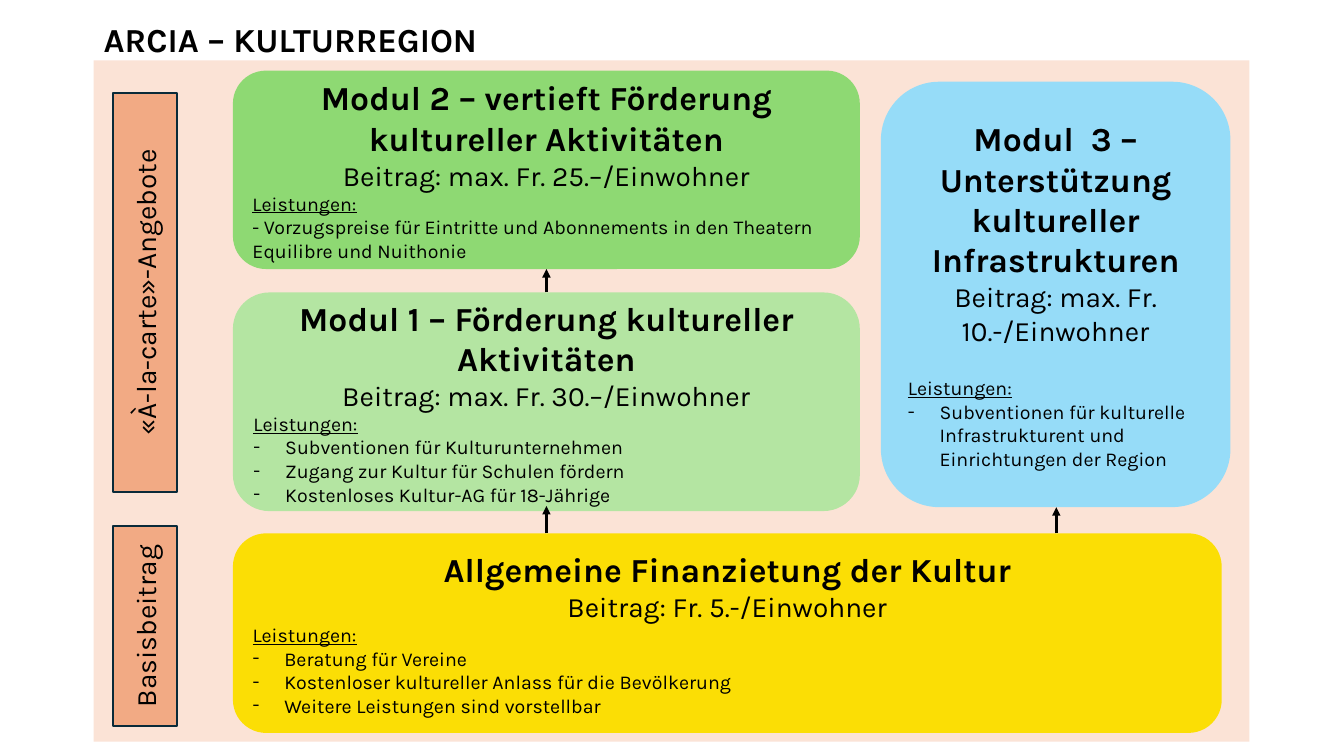
from lxml.etree import SubElement
from pptx import Presentation
from pptx.dml.color import RGBColor
from pptx.enum.shapes import MSO_CONNECTOR, MSO_SHAPE
from pptx.enum.text import MSO_ANCHOR, MSO_AUTO_SIZE, PP_ALIGN
from pptx.oxml.ns import qn
from pptx.util import Cm, Pt

FONT = "Karla"
COLORS = {
    "text": "000000",
    "panel": "FBE3D6",
    "label": "F2AA84",
    "label_line": "092A39",
    "base": "FBDE05",
    "module_1": "B4E5A2",
    "module_2": "8ED973",
    "module_3": "96DCF8",
}

# Boxes are left, top, width, height in centimetres
TITLE_BOX = (2.36, 0.36, 15.06, 1.27)
PANEL_BOX = (2.36, 1.52, 29.13, 17.17)
LABELS = [
    ("«À-la-carte»-Angebote", (2.84, 2.34, 1.63, 10.06)),
    ("Basisbeitrag", (2.84, 13.26, 1.63, 5.03)),
]
BASE_BOX = (5.87, 13.44, 24.92, 5.03)
MODULE_1_BOX = (5.87, 7.37, 15.8, 5.51)
MODULE_2_BOX = (5.87, 1.78, 15.8, 5)
MODULE_3_BOX = (22.2, 2.06, 8.81, 10.72)
ARROWS = [(13.77, 13.44, 12.75), (13.77, 7.37, 6.78), (26.62, 13.44, 12.78)]


def rgb(name):
    return RGBColor.from_string(COLORS[name])


def write_text(frame, text, size, bold=False, underline=False,
               align=PP_ALIGN.LEFT, dash=False, space_before=0):
    """Fill the empty first paragraph of the frame, or append a new one."""
    paragraph = frame.paragraphs[0]
    if paragraph.runs:
        paragraph = frame.add_paragraph()
    paragraph.alignment = align
    if space_before:
        paragraph.space_before = Pt(space_before)
    if dash:
        properties = paragraph._p.get_or_add_pPr()
        properties.set("marL", str(Cm(0.8)))
        properties.set("indent", str(Cm(-0.8)))
        SubElement(properties, qn("a:buFont"), typeface=FONT)
        SubElement(properties, qn("a:buChar"), char="-")
    run = paragraph.add_run()
    run.text = text
    font = run.font
    font.name, font.size = FONT, Pt(size)
    font.bold, font.underline = bold, underline
    font.color.rgb = rgb("text")


def add_box(slide, kind, box, fill, line=None):
    shape = slide.shapes.add_shape(kind, *map(Cm, box))
    shape.shadow.inherit = False
    shape.fill.solid()
    shape.fill.fore_color.rgb = rgb(fill)
    if line:
        shape.line.color.rgb = rgb(line)
        shape.line.width = Pt(1.5)
    else:
        shape.line.fill.background()
    shape.text_frame.word_wrap = True
    shape.text_frame.vertical_anchor = MSO_ANCHOR.MIDDLE
    return shape


def add_title(slide, text, box):
    title = slide.shapes.title
    title.left, title.top, title.width, title.height = map(Cm, box)
    frame = title.text_frame
    frame.word_wrap = True
    frame.auto_size = MSO_AUTO_SIZE.NONE
    frame.vertical_anchor = MSO_ANCHOR.TOP
    write_text(frame, text, 24, bold=True)


def add_side_label(slide, text, box):
    """Fill the upright box with a bar turned to read from bottom to top."""
    left, top, width, height = box
    shift = (height - width) / 2
    shape = add_box(slide, MSO_SHAPE.RECTANGLE,
                    (left - shift, top + shift, height, width), "label", "label_line")
    shape.rotation = 270
    write_text(shape.text_frame, text, 20, align=PP_ALIGN.CENTER)


def add_module(slide, box, fill, heading, fee, services, dash=True, gap=0):
    frame = add_box(slide, MSO_SHAPE.ROUNDED_RECTANGLE, box, fill).text_frame
    write_text(frame, heading, 24, bold=True, align=PP_ALIGN.CENTER)
    write_text(frame, fee, 20, align=PP_ALIGN.CENTER)
    write_text(frame, "Leistungen:", 14, underline=True, space_before=gap)
    for service in services:
        write_text(frame, service, 14, dash=dash)


def add_arrow(slide, x, start, end):
    arrow = slide.shapes.add_connector(
        MSO_CONNECTOR.STRAIGHT, Cm(x), Cm(start), Cm(x), Cm(end))
    arrow.line.color.rgb = rgb("text")
    arrow.line.width = Pt(2)
    SubElement(arrow.line._get_or_add_ln(), qn("a:tailEnd"), type="triangle")
    SubElement(arrow._element.spPr, qn("a:effectLst"))


def build_slide(presentation):
    slide = presentation.slides.add_slide(presentation.slide_layouts[5])
    add_title(slide, "ARCIA – KULTURREGION", TITLE_BOX)
    add_box(slide, MSO_SHAPE.RECTANGLE, PANEL_BOX, "panel")
    for text, box in LABELS:
        add_side_label(slide, text, box)
    add_module(slide, BASE_BOX, "base", "Allgemeine Finanzietung der Kultur",
               "Beitrag: Fr. 5.-/Einwohner",
               ["Beratung für Vereine",
                "Kostenloser kultureller Anlass für die Bevölkerung",
                "Weitere Leistungen sind vorstellbar"])
    add_module(slide, MODULE_1_BOX, "module_1",
               "Modul 1 – Förderung kultureller Aktivitäten",
               "Beitrag: max. Fr. 30.–/Einwohner",
               ["Subventionen für Kulturunternehmen",
                "Zugang zur Kultur für Schulen fördern",
                "Kostenloses Kultur-AG für 18-Jährige"])
    add_module(slide, MODULE_2_BOX, "module_2",
               "Modul 2 – vertieft Förderung kultureller Aktivitäten",
               "Beitrag: max. Fr. 25.–/Einwohner",
               ["- Vorzugspreise für Eintritte und Abonnements in den Theatern "
                "Equilibre und Nuithonie"], dash=False)
    add_module(slide, MODULE_3_BOX, "module_3",
               "Modul  3 – Unterstützung kultureller Infrastrukturen",
               "Beitrag: max. Fr. 10.-/Einwohner",
               ["Subventionen für kulturelle Infrastrukturent und "
                "Einrichtungen der Region"], gap=21)
    for x, start, end in ARROWS:
        add_arrow(slide, x, start, end)


def main():
    presentation = Presentation()
    presentation.slide_width, presentation.slide_height = Cm(33.87), Cm(19.05)
    build_slide(presentation)
    presentation.save("out.pptx")


if __name__ == "__main__":
    main()
